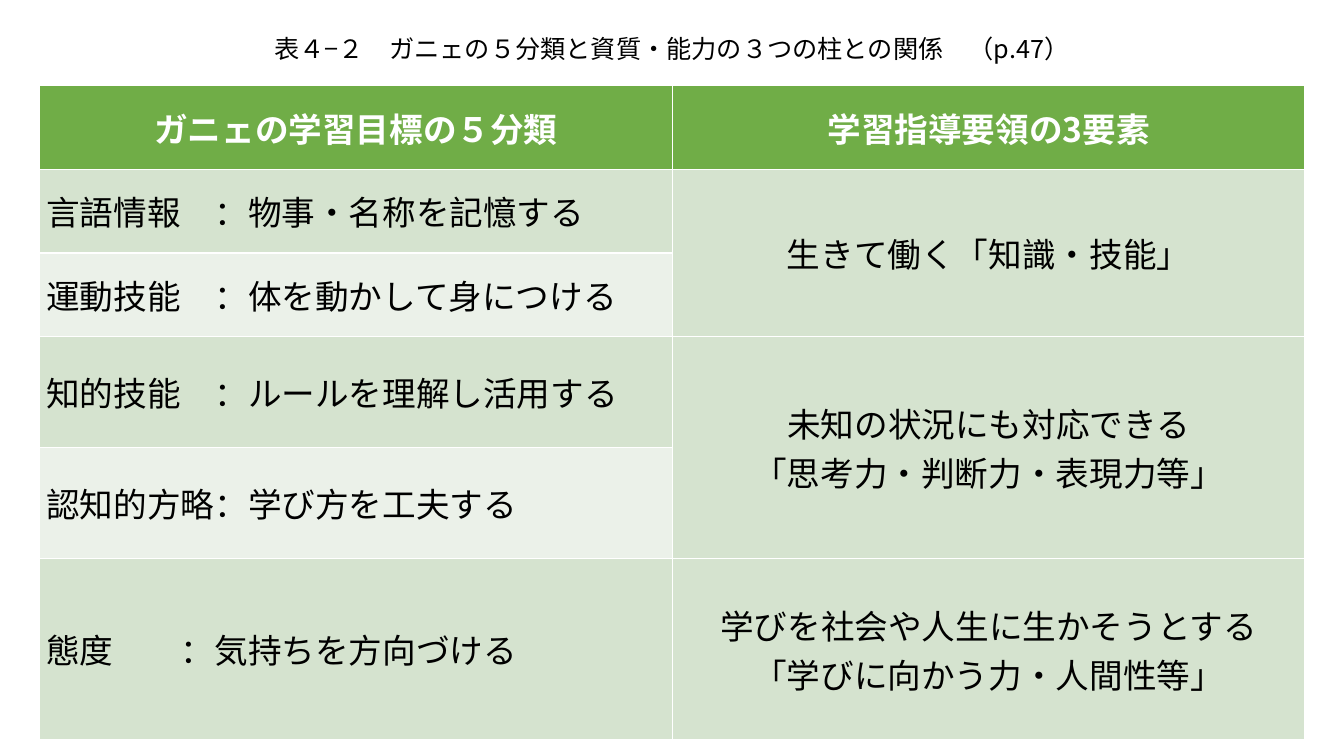
from lxml.etree import SubElement
from pptx import Presentation
from pptx.dml.color import RGBColor
from pptx.enum.text import MSO_ANCHOR, PP_ALIGN
from pptx.oxml.ns import qn
from pptx.util import Inches, Pt

FONT_NAME = "Noto Sans CJK JP"
BLACK = RGBColor(0x00, 0x00, 0x00)
WHITE = RGBColor(0xFF, 0xFF, 0xFF)
HEADER_GREEN = RGBColor(0x70, 0xAD, 0x47)
BAND_GREEN = RGBColor(0xD5, 0xE3, 0xCF)
PALE_GREEN = RGBColor(0xEB, 0xF1, 0xE9)

HEADERS = ["ガニェの学習目標の５分類", "学習指導要領の3要素"]
CATEGORIES = [
    "言語情報　：物事・名称を記憶する",
    "運動技能　：体を動かして身につける",
    "知的技能　：ルールを理解し活用する",
    "認知的方略：学び方を工夫する",
    "態度　　：気持ちを方向づける",
]
# First row, last row and text; \v is a line break
ELEMENTS = [
    (1, 2, "生きて働く「知識・技能」"),
    (3, 4, "未知の状況にも対応できる\v「思考力・判断力・表現力等」"),
    (5, 5, "学びを社会や人生に生かそうとする\v「学びに向かう力・人間性等」"),
]
COLUMN_WIDTHS = [6.28, 6.27]
ROW_HEIGHTS = [0.83, 0.83, 0.83, 1.1, 1.1, 1.8]


def format_paragraph(paragraph, size, color, alignment, bold=False):
    paragraph.alignment = alignment
    font = paragraph.font
    font.size = Pt(size)
    font.bold = bold
    font.color.rgb = color
    font.name = FONT_NAME
    # Japanese glyphs take the East Asian typeface
    SubElement(font._element, qn("a:ea")).set("typeface", FONT_NAME)


def fill_cell(cell, text, fill, color=BLACK, alignment=PP_ALIGN.CENTER, bold=False):
    cell.text = text
    cell.vertical_anchor = MSO_ANCHOR.MIDDLE
    cell.margin_left = cell.margin_right = Inches(0.07)
    cell.margin_top = cell.margin_bottom = 0
    cell.fill.solid()
    cell.fill.fore_color.rgb = fill
    format_paragraph(cell.text_frame.paragraphs[0], 24, color, alignment, bold)


presentation = Presentation()
presentation.slide_width = Inches(13.33)
presentation.slide_height = Inches(7.5)
slide = presentation.slides.add_slide(presentation.slide_layouts[5])

title = slide.shapes.title
title.left, title.top = Inches(2.53), Inches(0.28)
title.width, title.height = Inches(8.27), Inches(0.4)
title.text = "表４−２　ガニェの５分類と資質・能力の３つの柱との関係　（p.47）"
title.text_frame.word_wrap = False
title.text_frame.vertical_anchor = MSO_ANCHOR.MIDDLE
format_paragraph(title.text_frame.paragraphs[0], 18, BLACK, PP_ALIGN.CENTER)

table = slide.shapes.add_table(
    len(ROW_HEIGHTS), len(COLUMN_WIDTHS), Inches(0.39), Inches(0.85),
    Inches(sum(COLUMN_WIDTHS)), Inches(sum(ROW_HEIGHTS)),
).table
for column, width in zip(table.columns, COLUMN_WIDTHS):
    column.width = Inches(width)
for row, height in zip(table.rows, ROW_HEIGHTS):
    row.height = Inches(height)

for column_index, header in enumerate(HEADERS):
    fill_cell(table.cell(0, column_index), header, HEADER_GREEN, WHITE, bold=True)

for row_index, category in enumerate(CATEGORIES, start=1):
    fill = BAND_GREEN if row_index % 2 else PALE_GREEN
    fill_cell(table.cell(row_index, 0), category, fill, alignment=PP_ALIGN.LEFT)

for first_row, last_row, element in ELEMENTS:
    cell = table.cell(first_row, 1)
    if last_row > first_row:
        cell.merge(table.cell(last_row, 1))
    fill_cell(cell, element, BAND_GREEN)

presentation.save("out.pptx")
